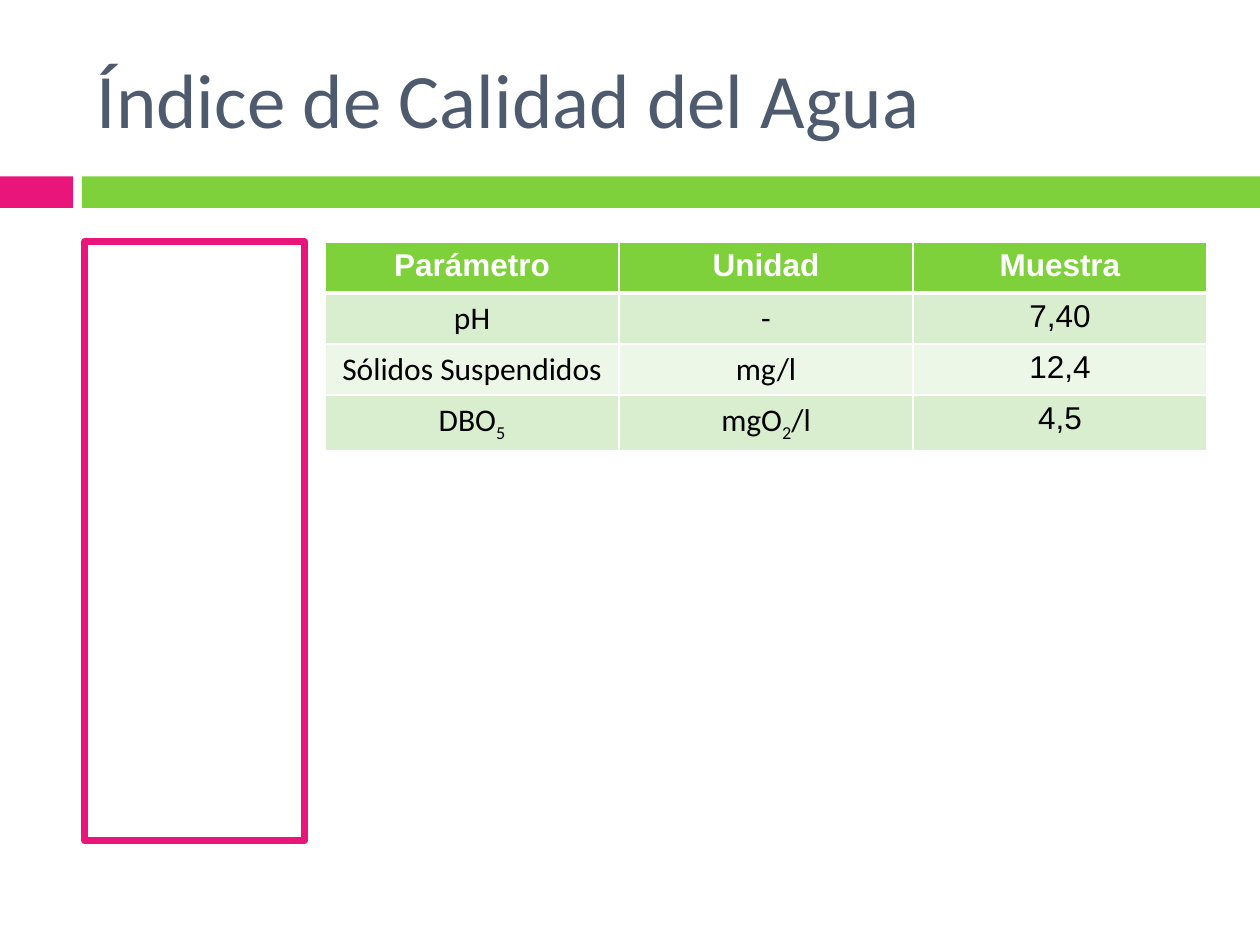
from lxml import etree
from pptx import Presentation
from pptx import util as u
from pptx.dml.color import RGBColor
from pptx.enum import shapes, text
from pptx.oxml.ns import qn

GREEN, PINK, WHITE = "7FD13B", "EA157A", "FFFFFF"
BANDS = ("D8EECE", "ECF7E8")
HEADINGS = ("Parámetro", "Unidad", "Muestra")
SAMPLES = (
    ("pH", "-", "7,40"),
    ("Sólidos Suspendidos", "mg/l", "12,4"),
    ("DBO_5", "mgO_2_/l", "4,5"),
)


def color(value):
    return RGBColor.from_string(value)


def inches(*lengths):
    return [u.Inches(length) for length in lengths]


def write(frame, content, font="Calibri", size=18, fill="000000", bold=False, align=text.PP_ALIGN.LEFT):
    """Underscores in content switch subscript on and off."""
    para = frame.paragraphs[0]
    para.alignment = align
    for index, piece in enumerate(content.split("_")):
        if not piece:
            continue
        span = para.add_run()
        span.text = piece
        span.font.name = font
        span.font.size = u.Pt(size)
        span.font.bold = bold
        span.font.color.rgb = color(fill)
        if index % 2:
            span.font._element.set("baseline", "-25000")


def add_rectangle(page, area, fill=None, line=None, width=0):
    box = page.shapes.add_shape(shapes.MSO_SHAPE.RECTANGLE, *inches(*area))
    box.shadow.inherit = False
    if fill:
        box.fill.solid()
        box.fill.fore_color.rgb = color(fill)
    else:
        box.fill.background()
    if line:
        box.line.color.rgb = color(line)
        box.line.width = u.Pt(width)
    else:
        box.line.fill.background()


def add_title(page, content, area):
    box = page.shapes.add_textbox(*inches(*area))
    frame = box.text_frame
    frame.word_wrap = True
    frame.vertical_anchor = text.MSO_ANCHOR.MIDDLE
    write(frame, content, size=44, fill="4E5B6F")


def set_border(cell, side, width):
    properties = cell._tc.get_or_add_tcPr()
    line = etree.SubElement(properties, qn(f"a:ln{side}"), w=str(u.Pt(width)))
    solid = etree.SubElement(line, qn("a:solidFill"))
    etree.SubElement(solid, qn("a:srgbClr"), val=WHITE)


def format_cell(cell, content, row, column):
    header = row == 0
    for side in "LRTB":
        thick = (header and side == "B") or (row == 1 and side == "T")
        set_border(cell, side, 3 if thick else 1)
    cell.fill.solid()
    cell.fill.fore_color.rgb = color(GREEN if header else BANDS[(row - 1) % 2])
    write(
        cell.text_frame,
        content,
        font="Arial" if header or column == 2 else "Calibri",
        fill=WHITE if header else "000000",
        bold=header,
        align=text.PP_ALIGN.CENTER,
    )


def add_samples_table(page, rows, area):
    table = page.shapes.add_table(len(rows), len(rows[0]), *inches(*area)).table
    for row, contents in enumerate(rows):
        for column, content in enumerate(contents):
            format_cell(table.cell(row, column), content, row, column)


def main():
    deck = Presentation()
    deck.slide_width, deck.slide_height = inches(10, 7.5)
    page = deck.slides.add_slide(deck.slide_layouts[6])
    add_rectangle(page, (0, 1.4, 0.58, 0.25), fill=PINK)
    add_rectangle(page, (0.65, 1.4, 9.35, 0.25), fill=GREEN)
    add_title(page, "Índice de Calidad del Agua", (0.67, 0.3, 8.83, 0.95))
    add_rectangle(page, (0.67, 1.92, 1.75, 4.75), line=PINK, width=4)
    add_samples_table(page, (HEADINGS, *SAMPLES), (2.58, 1.92, 7, 1.62))
    deck.save("out.pptx")


if __name__ == "__main__":
    main()
